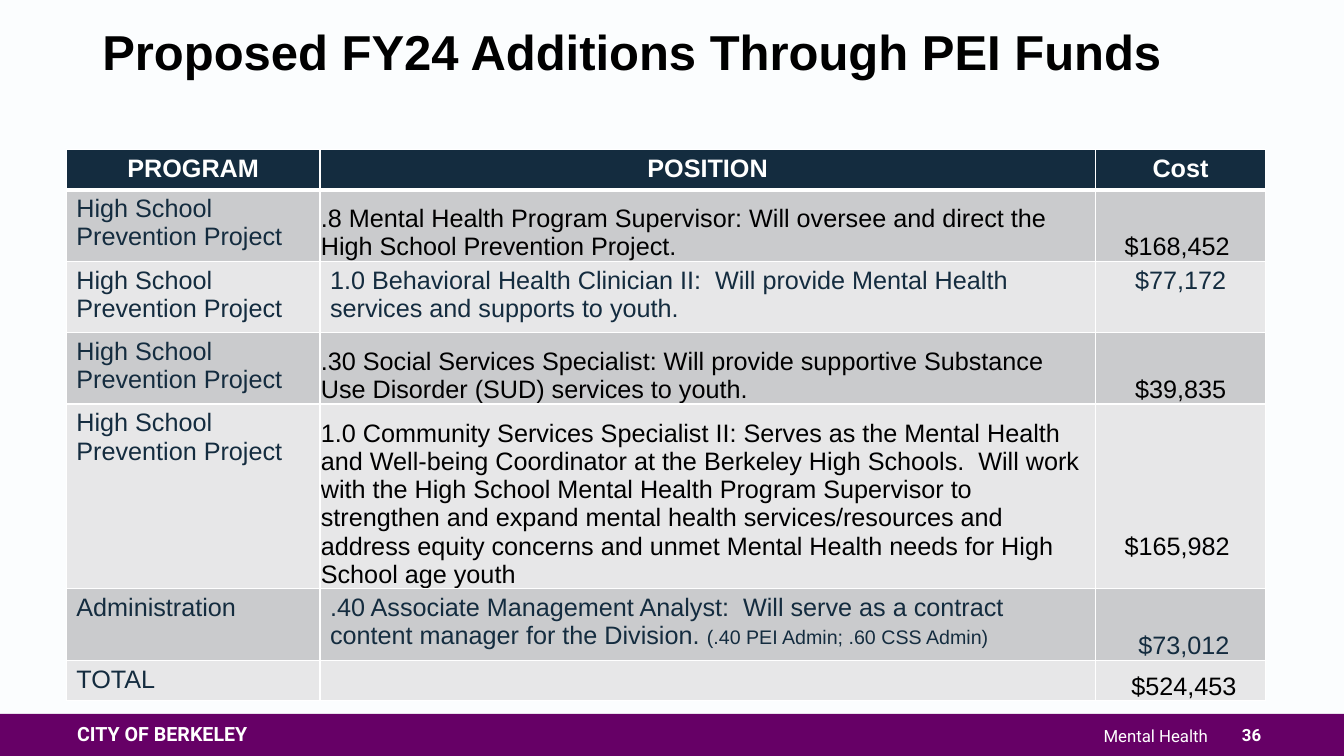
from dataclasses import dataclass

from lxml.etree import SubElement
from pptx import Presentation
from pptx.dml.color import RGBColor
from pptx.enum.shapes import MSO_SHAPE
from pptx.enum.text import MSO_ANCHOR, PP_ALIGN
from pptx.oxml.ns import qn
from pptx.util import Inches, Pt

WHITE = RGBColor(0xFF, 0xFF, 0xFF)
BLACK = RGBColor(0, 0, 0)
NAVY = RGBColor(0x14, 0x2C, 0x3F)
PURPLE = RGBColor(0x66, 0, 0x66)
BACKGROUND = RGBColor(0xFB, 0xFD, 0xFE)
BANDS = (RGBColor(0xCA, 0xCB, 0xCD), RGBColor(0xE7, 0xE7, 0xE8))

GRID_COLS, GRID_ROWS = 160, 90  # square grid units of 1/12 inch
COL_WIDTHS = (30.2, 92.3, 20.3)
ROW_HEIGHTS = (4.8, 8.5, 8.5, 8.5, 22, 8.5, 4.8)
HEADERS = ("PROGRAM", "POSITION", "Cost")
BORDERS = ("a:lnL", "a:lnR", "a:lnT", "a:lnB")

Box = tuple[float, float, float, float]
Insets = tuple[float, float, float, float]
ROOMY: Insets = (1.2, 0.6, 1.2, 0.6)
TIGHT: Insets = (0.1, 0.1, 0.1, 0)


@dataclass(frozen=True)
class Label:
    text: str
    box: Box
    size: float
    font: str = "Roboto"
    color: RGBColor = WHITE
    bold: bool = False
    align: PP_ALIGN = PP_ALIGN.LEFT
    anchor: MSO_ANCHOR = MSO_ANCHOR.MIDDLE
    spacing: float = 0.9


@dataclass(frozen=True)
class CellText:
    text: str = ""
    color: RGBColor = NAVY
    insets: Insets = ROOMY
    align: PP_ALIGN = PP_ALIGN.LEFT
    anchor: MSO_ANCHOR = MSO_ANCHOR.TOP
    bold: bool = False
    note: str = ""


def low(text: str) -> CellText:
    """Black text resting on the bottom of its cell."""
    return CellText(text, BLACK, TIGHT, anchor=MSO_ANCHOR.BOTTOM)


def cost(text: str, color: RGBColor = BLACK, insets: Insets = TIGHT) -> CellText:
    return CellText(text, color, insets, PP_ALIGN.CENTER, MSO_ANCHOR.BOTTOM)


SCHOOL = CellText("High School Prevention Project")
ROWS = (
    (SCHOOL,
     low(".8 Mental Health Program Supervisor: Will oversee and direct the "
         "High School Prevention Project."),
     cost("$168,452", insets=(0.1, 0.1, 0.9, 0))),
    (SCHOOL,
     CellText("1.0 Behavioral Health Clinician II:  Will provide Mental Health "
              "services and supports to youth."),
     CellText("$77,172", align=PP_ALIGN.CENTER)),
    (SCHOOL,
     low(".30 Social Services Specialist: Will provide supportive Substance "
         "Use Disorder (SUD) services to youth."),
     cost("$39,835")),
    (SCHOOL,
     low("1.0 Community Services Specialist II: Serves as the Mental Health and "
         "Well-being Coordinator at the Berkeley High Schools.  Will work with the "
         "High School Mental Health Program Supervisor to strengthen and expand "
         "mental health services/resources and address equity concerns and unmet "
         "Mental Health needs for High School age youth"),
     cost("$165,982", insets=(0.1, 0.1, 0.9, 3.36))),
    (CellText("Administration"),
     CellText(".40 Associate Management Analyst:  Will serve as a contract content "
              "manager for the Division. ", note="(.40 PEI Admin; .60 CSS Admin)"),
     cost("$73,012", NAVY, (0.9, 0.1, 0.1, 0))),
    (CellText("TOTAL"), CellText(), cost("$524,453", insets=(0.9, 0.1, 0.1, 0))),
)

LABELS = (
    Label("CITY OF BERKELEY", (8, 83.4, 30, 8.2), 14, bold=True),
    Label("Mental Health", (70, 83.6, 75, 8.2), 12, align=PP_ALIGN.RIGHT),
    Label("36", (145, 85, 8, 5), 12, bold=True, align=PP_ALIGN.CENTER, spacing=1.0),
    Label("Proposed FY24 Additions Through PEI Funds", (11, 2.8, 138, 12.2), 35,
          "Arial", BLACK, True, anchor=MSO_ANCHOR.TOP),
)


def u(units: float) -> int:
    """Length of a number of grid units."""
    return Inches(units / 12)


def add_run(p, text: str, size: float, font: str, color: RGBColor, bold: bool) -> None:
    r = p.add_run()
    r.text = text
    for key, value in {"size": Pt(size), "name": font, "bold": bold}.items():
        setattr(r.font, key, value)
    r.font.color.rgb = color


def add_label(s, label: Label) -> None:
    tf = s.shapes.add_textbox(*map(u, label.box)).text_frame
    tf.word_wrap = True
    tf.vertical_anchor = label.anchor
    p = tf.paragraphs[0]
    p.alignment, p.line_spacing = label.align, label.spacing
    add_run(p, label.text, label.size, label.font, label.color, label.bold)


def add_borders(cell, bottom_width: float) -> None:
    tc_pr = cell._tc.get_or_add_tcPr()
    for i, tag in enumerate(BORDERS):
        width = bottom_width if tag == "a:lnB" else 1
        ln = SubElement(tc_pr, qn(tag), w=str(Pt(width)))
        SubElement(SubElement(ln, qn("a:solidFill")), qn("a:srgbClr"), val=str(WHITE))
        tc_pr.insert(i, ln)


def fill_cell(cell, content: CellText, fill: RGBColor, bottom_width: float) -> None:
    cell.fill.solid()
    cell.fill.fore_color.rgb = fill
    for side, inset in zip(("left", "top", "right", "bottom"), content.insets):
        setattr(cell, f"margin_{side}", u(inset))
    cell.vertical_anchor = content.anchor
    p = cell.text_frame.paragraphs[0]
    p.alignment = content.align
    for text, size in ((content.text, 18), (content.note, 14)):
        if text:
            add_run(p, text, size, "Arial", content.color, content.bold)
    add_borders(cell, bottom_width)


def add_positions_table(s) -> None:
    header = tuple(CellText(h, WHITE, align=PP_ALIGN.CENTER, bold=True) for h in HEADERS)
    rows = (header, *ROWS)
    table = s.shapes.add_table(len(rows), len(HEADERS), u(7.9), u(17.8),
                               u(sum(COL_WIDTHS)), u(sum(ROW_HEIGHTS))).table
    for column, width in zip(table.columns, COL_WIDTHS):
        column.width = u(width)
    for i, (row, height, contents) in enumerate(zip(table.rows, ROW_HEIGHTS, rows)):
        row.height = u(height)
        fill = BANDS[(i - 1) % 2] if i else NAVY
        for cell, content in zip(row.cells, contents):
            fill_cell(cell, content, fill, 1 if i else 3)


def add_footer_bar(s) -> None:
    sp = s.shapes.add_shape(MSO_SHAPE.RECTANGLE, 0, u(85), u(GRID_COLS), u(5))
    sp.shadow.inherit = False
    sp.fill.solid()
    sp.fill.fore_color.rgb = PURPLE
    sp.line.fill.background()


def main() -> None:
    prs = Presentation()
    prs.slide_width, prs.slide_height = u(GRID_COLS), u(GRID_ROWS)
    s = prs.slides.add_slide(prs.slide_layouts[6])
    s.background.fill.solid()
    s.background.fill.fore_color.rgb = BACKGROUND
    add_footer_bar(s)
    for label in LABELS:
        add_label(s, label)
    add_positions_table(s)
    prs.save("out.pptx")


if __name__ == "__main__":
    main()
